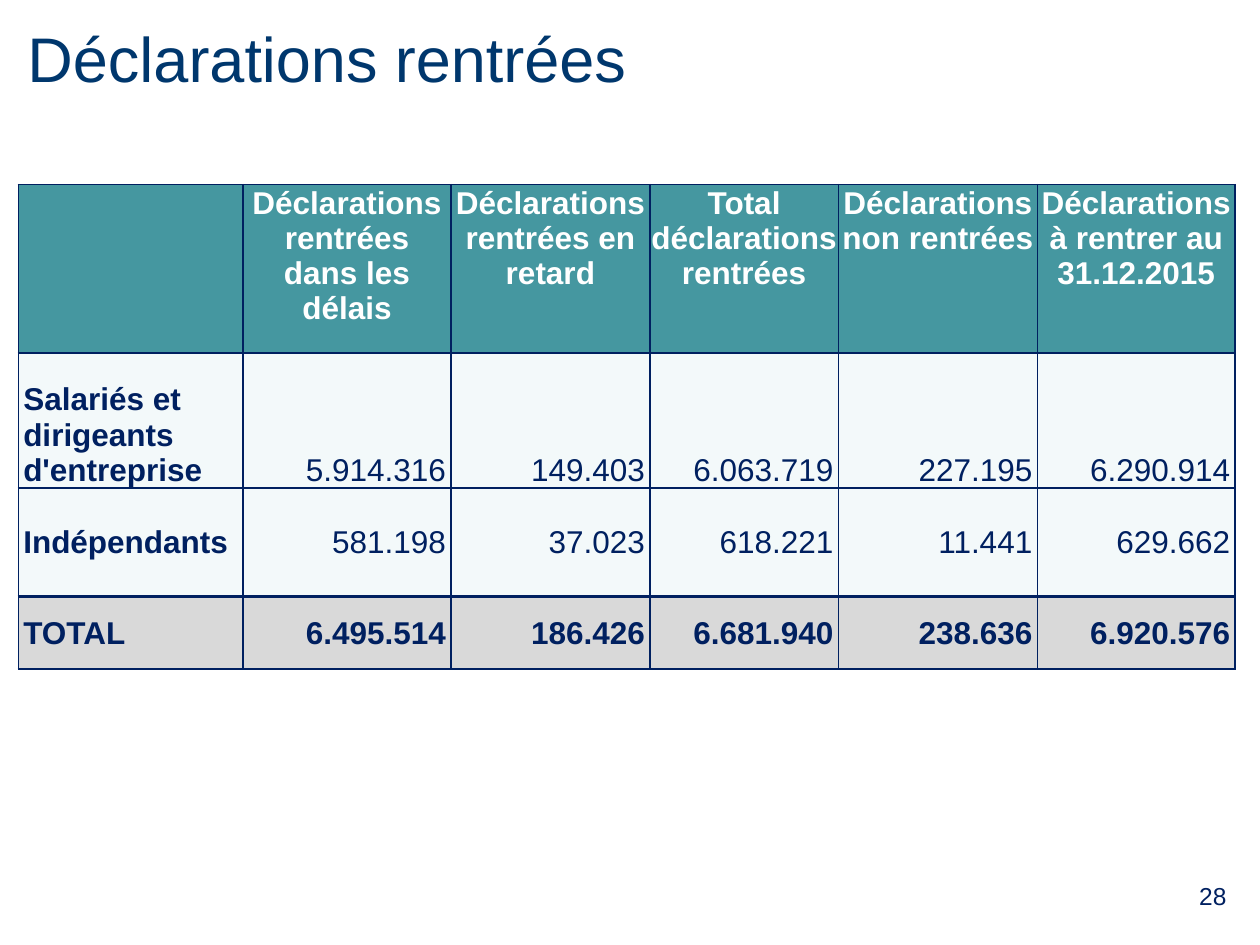
"""Build the slide on tax returns filed, with its table of counts."""
import pptx
import pptx.dml.color
import pptx.enum.text
import pptx.oxml
import pptx.oxml.ns
import pptx.util

Cm, Pt = pptx.util.Cm, pptx.util.Pt
RGBColor = pptx.dml.color.RGBColor
ALIGN, ANCHOR = pptx.enum.text.PP_ALIGN, pptx.enum.text.MSO_ANCHOR

TITLE_BLUE = RGBColor(0x00, 0x37, 0x6D)
NAVY = RGBColor(0x00, 0x20, 0x60)
WHITE = RGBColor(0xFF, 0xFF, 0xFF)
TEAL = RGBColor(0x45, 0x97, 0xA0)
PALE = RGBColor(0xF3, 0xF9, 0xFA)
GREY = RGBColor(0xD9, 0xD9, 0xD9)

TITLE = "Déclarations rentrées"
PAGE = "28"
COUNTS = [
    ("", "Déclarations rentrées dans les délais", "Déclarations rentrées en retard",
     "Total déclarations rentrées", "Déclarations non rentrées",
     "Déclarations à rentrer au 31.12.2015"),
    ("Salariés et dirigeants d'entreprise",
     "5.914.316", "149.403", "6.063.719", "227.195", "6.290.914"),
    ("Indépendants", "581.198", "37.023", "618.221", "11.441", "629.662"),
    ("TOTAL", "6.495.514", "186.426", "6.681.940", "238.636", "6.920.576"),
]
COLUMN_WIDTHS = [4.53, 4.19, 4.01, 3.8, 4.01, 3.99]
ROW_HEIGHTS = [3.4, 2.72, 2.18, 1.47]
ROW_FILLS = [TEAL, PALE, PALE, GREY]
ROW_ANCHORS = [ANCHOR.TOP, ANCHOR.BOTTOM, ANCHOR.MIDDLE, ANCHOR.MIDDLE]
RULE_WIDTHS = [1, 1, 1, 2.25, 1]


def style(paragraph, size, color, align, bold=False):
    paragraph.alignment = align
    paragraph.font.name = "Arial"
    paragraph.font.size = Pt(size)
    paragraph.font.bold = bold
    paragraph.font.color.rgb = color


def add_borders(cell, top, bottom):
    properties = cell._tc.get_or_add_tcPr()
    for side, width in (("L", 1), ("R", 1), ("T", top), ("B", bottom)):
        properties.append(pptx.oxml.parse_xml(
            f'<a:ln{side} {pptx.oxml.ns.nsdecls("a")} w="{Pt(width)}">'
            f'<a:solidFill><a:srgbClr val="{NAVY}"/></a:solidFill></a:ln{side}>'))


def fill_cell(cell, text, row, column):
    header, label = row == 0, column == 0
    cell.text = text
    cell.vertical_anchor = ROW_ANCHORS[row]
    cell.margin_left = Cm(0.1 if label and not header else 0.02)
    cell.margin_right = Cm(0.02 if label or header else 0.1)
    cell.margin_top, cell.margin_bottom = Cm(0.02), 0
    align = ALIGN.CENTER if header else ALIGN.LEFT if label else ALIGN.RIGHT
    bold = label or row in (0, len(COUNTS) - 1)
    style(cell.text_frame.paragraphs[0], 18, WHITE if header else NAVY, align, bold)
    add_borders(cell, RULE_WIDTHS[row], RULE_WIDTHS[row + 1])
    cell.fill.solid()
    cell.fill.fore_color.rgb = ROW_FILLS[row]


def main():
    deck = pptx.Presentation()
    deck.slide_width, deck.slide_height = Cm(25.4), Cm(19.05)
    slide = deck.slides.add_slide(deck.slide_layouts[5])

    title = slide.shapes.title
    title.left, title.top, title.width, title.height = Cm(0.3), Cm(0.13), Cm(23.8), Cm(2.06)
    title.text_frame.text = TITLE
    title.text_frame.vertical_anchor = ANCHOR.MIDDLE
    style(title.text_frame.paragraphs[0], 36, TITLE_BLUE, ALIGN.LEFT)

    counts = slide.shapes.add_table(
        len(COUNTS), len(COLUMN_WIDTHS), Cm(0.37), Cm(3.72),
        Cm(sum(COLUMN_WIDTHS)), Cm(sum(ROW_HEIGHTS))).table
    for column, width in zip(counts.columns, COLUMN_WIDTHS):
        column.width = Cm(width)
    for row, height in zip(counts.rows, ROW_HEIGHTS):
        row.height = Cm(height)
    for row, texts in enumerate(COUNTS):
        for column, text in enumerate(texts):
            fill_cell(counts.cell(row, column), text, row, column)

    page = slide.shapes.add_textbox(Cm(23.5), Cm(17.63), Cm(1.9), Cm(1.32)).text_frame
    page.word_wrap = True
    page.text = PAGE
    style(page.paragraphs[0], 14, NAVY, ALIGN.CENTER)

    deck.save("out.pptx")


if __name__ == "__main__":
    main()
